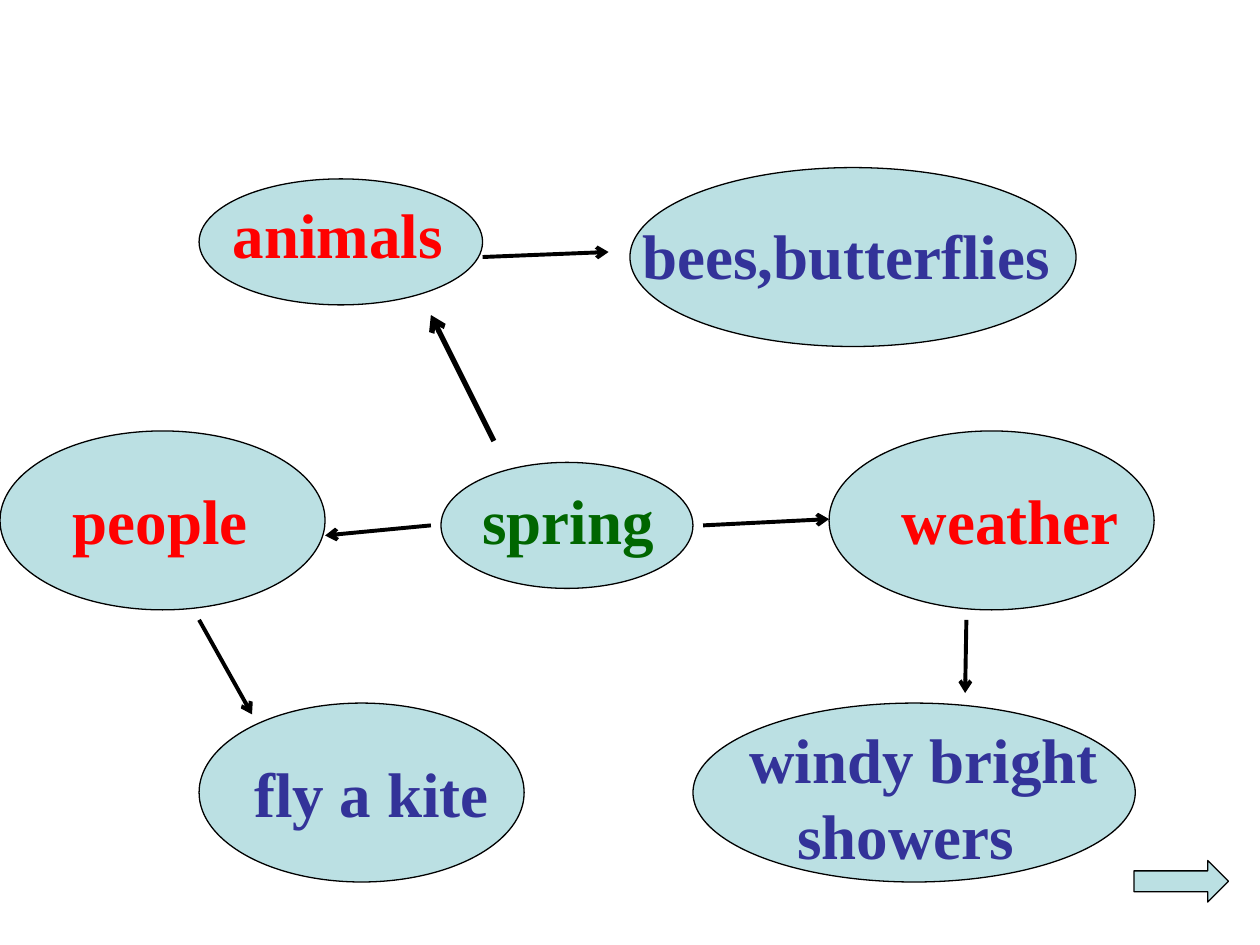
"""Builds a mind map slide about spring."""
from typing import NamedTuple

from lxml.etree import SubElement
from pptx import Presentation
from pptx.dml.color import RGBColor
from pptx.enum.shapes import MSO_CONNECTOR, MSO_SHAPE
from pptx.oxml.ns import qn
from pptx.slide import Slide
from pptx.util import Inches, Pt

COLORS = {
    "fill": "BBE0E3",
    "line": "000000",
    "center": "006600",
    "topic": "FF0000",
    "detail": "333399",
}
FONT = "Times New Roman"


class Line(NamedTuple):
    """A line of label text with its indent in inches."""
    text: str
    indent: float = 0


class Bubble(NamedTuple):
    """An ellipse and the label box laid over it, in inches."""
    ellipse: tuple[float, float, float, float]
    label: tuple[float, float, float, float]
    color: str
    lines: list[Line]


class Arrow(NamedTuple):
    """A straight arrow in inches with its width in points."""
    start: tuple[float, float]
    end: tuple[float, float]
    width: float = 2.25


BUBBLES = [
    Bubble((6.58, 3.42, 2.58, 1.42), (7.06, 3.77, 1.94, 0.71), "topic", [Line("weather")]),
    Bubble((3.5, 3.67, 2, 1), (3.73, 3.77, 1.62, 0.71), "center", [Line("spring")]),
    Bubble((0, 3.42, 2.58, 1.42), (0.48, 3.77, 1.62, 0.71), "topic", [Line("people")]),
    Bubble((1.58, 1.42, 2.25, 1), (1.75, 1.5, 1.89, 0.71), "topic", [Line("animals")]),
    Bubble((5.5, 5.58, 3.51, 1.42), (5.73, 5.67, 4.52, 1.43), "detail",
           [Line("windy bright", 0.12), Line("showers", 0.5)]),
    Bubble((1.58, 5.58, 2.58, 1.42), (1.92, 5.94, 2.08, 0.71), "detail", [Line("fly a kite")]),
    Bubble((5, 1.33, 3.54, 1.42), (5, 1.67, 3.47, 0.71), "detail", [Line("bees,butterflies")]),
]

ARROWS = [
    Arrow((3.92, 3.5), (3.42, 2.5), 3),
    Arrow((3.42, 4.17), (2.58, 4.25)),
    Arrow((5.58, 4.17), (6.58, 4.12)),
    Arrow((3.83, 2.04), (4.83, 2)),
    Arrow((7.67, 4.92), (7.66, 5.5)),
    Arrow((1.58, 4.92), (2, 5.67)),
]


def color(name: str) -> RGBColor:
    """Return a named colour."""
    return RGBColor.from_string(COLORS[name])


def add_outlined(slide: Slide, kind: MSO_SHAPE, box: tuple[float, ...]) -> None:
    """Draw a filled shape with a thin outline."""
    shape = slide.shapes.add_shape(kind, *map(Inches, box))
    shape.shadow.inherit = False
    shape.fill.solid()
    shape.fill.fore_color.rgb = color("fill")
    shape.line.color.rgb = color("line")
    shape.line.width = Pt(0.75)


def add_bubble(slide: Slide, bubble: Bubble) -> None:
    """Draw an ellipse and its label."""
    add_outlined(slide, MSO_SHAPE.OVAL, bubble.ellipse)
    frame = slide.shapes.add_textbox(*map(Inches, bubble.label)).text_frame
    frame.word_wrap = True
    frame.margin_right = 0
    for index, line in enumerate(bubble.lines):
        paragraph = frame.add_paragraph() if index else frame.paragraphs[0]
        if line.indent:
            paragraph._p.get_or_add_pPr().set("marL", str(Inches(line.indent)))
        run = paragraph.add_run()
        run.text = line.text
        run.font.name = FONT
        run.font.size = Pt(36)
        run.font.bold = True
        run.font.color.rgb = color(bubble.color)


def add_arrow(slide: Slide, arrow: Arrow) -> None:
    """Draw a connector with an open arrowhead at its end."""
    connector = slide.shapes.add_connector(
        MSO_CONNECTOR.STRAIGHT, *map(Inches, arrow.start + arrow.end))
    connector.line.color.rgb = color("line")
    connector.line.width = Pt(arrow.width)
    properties = connector._element.spPr
    SubElement(properties.find(qn("a:ln")), qn("a:tailEnd"), type="arrow")
    SubElement(properties, qn("a:effectLst"))


def main() -> None:
    """Build and save the presentation."""
    presentation = Presentation()
    presentation.slide_width = Inches(10)
    presentation.slide_height = Inches(7.5)
    slide = presentation.slides.add_slide(presentation.slide_layouts[6])
    for bubble in BUBBLES:
        add_bubble(slide, bubble)
    for arrow in ARROWS:
        add_arrow(slide, arrow)
    add_outlined(slide, MSO_SHAPE.RIGHT_ARROW, (9, 6.83, 0.75, 0.33))
    presentation.save("out.pptx")


if __name__ == "__main__":
    main()
